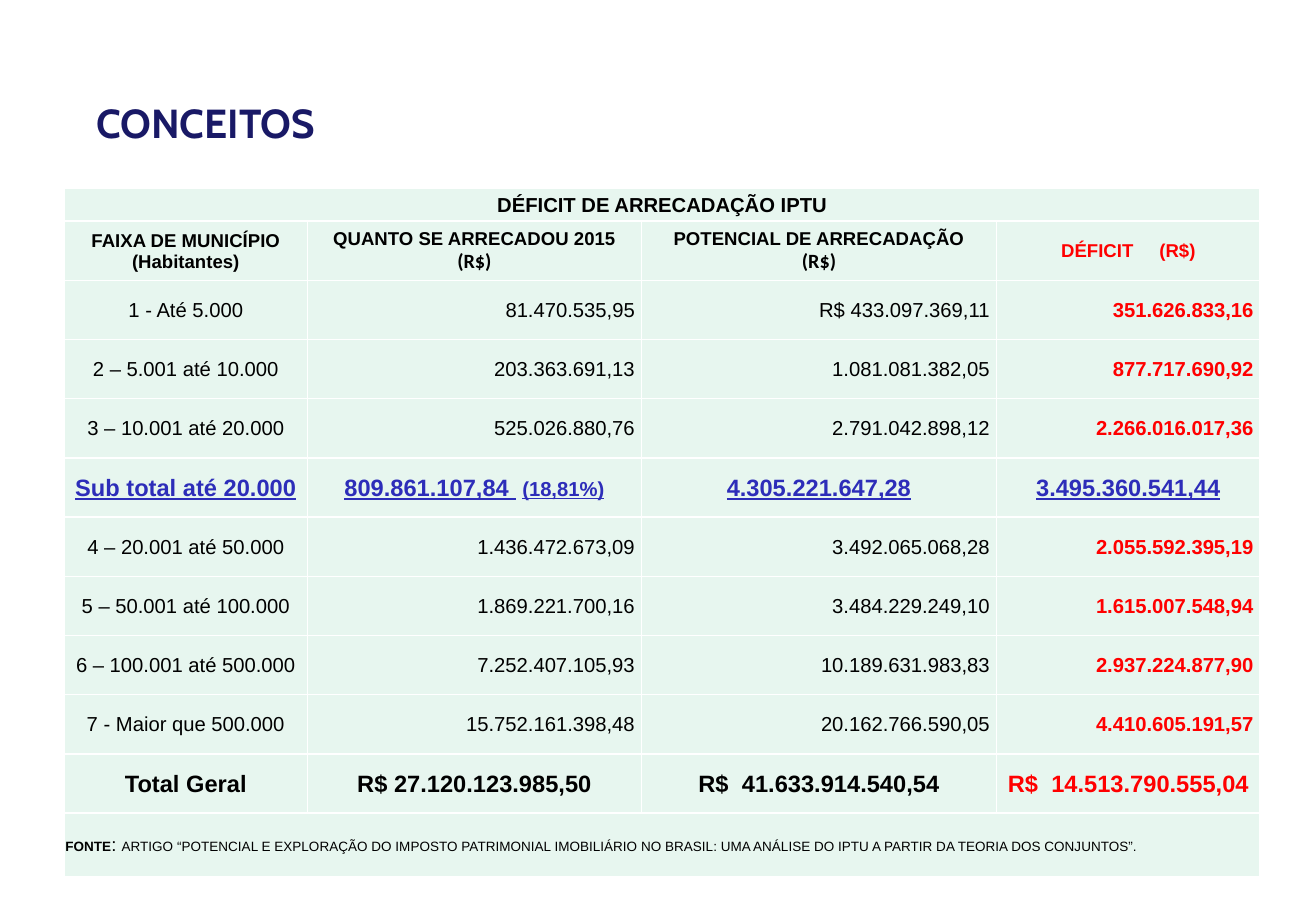
import dataclasses
import typing

import pptx
import pptx.dml.color
import pptx.enum.text
import pptx.oxml
import pptx.oxml.ns
import pptx.util

EMU_PER_PX = 3810
ALIGN = pptx.enum.text.PP_ALIGN
ANCHOR = pptx.enum.text.MSO_ANCHOR


@dataclasses.dataclass(frozen=True)
class Theme:
    title: str = "191966"
    ink: str = "000000"
    deficit: str = "FF0000"
    subtotal: str = "2D2DB9"
    cell: str = "E7F6EF"
    border: str = "FFFFFF"
    body_font: str = "Arial"
    title_font: str = "Cabin"
    unit_font: str = "Calibri"
    title_size: int = 24
    total_size: int = 14
    body_size: int = 12
    head_size: int = 11
    note_size: int = 8


T = Theme()


@dataclasses.dataclass(frozen=True)
class Run:
    text: str
    size: int = T.body_size
    bold: bool = True
    color: str = T.ink
    font: str = T.body_font
    underline: bool = False
    spacing: float = 0


@dataclasses.dataclass(frozen=True)
class Cell:
    lines: tuple[tuple[Run, ...], ...]
    align: ALIGN = ALIGN.CENTER
    margin_right: int = 2


def px(n: int) -> pptx.util.Emu:
    return pptx.util.Emu(n * EMU_PER_PX)


def add_text(p: typing.Any, text: str, *, size: int, bold: bool, color: str,
             font: str, underline: bool = False, spacing: float = 0) -> None:
    r = p.add_run()
    r.text = text
    f = r.font
    f.size = pptx.util.Pt(size)
    f.bold = bold
    f.underline = underline
    f.name = font
    f.color.rgb = pptx.dml.color.RGBColor.from_string(color)
    if spacing:
        r._r.get_or_add_rPr().set("spc", str(round(spacing * 100)))


def set_borders(tc: typing.Any) -> None:
    tcPr = tc.get_or_add_tcPr()
    for i, side in enumerate(("lnL", "lnR", "lnT", "lnB")):
        tcPr.insert(i, pptx.oxml.parse_xml(
            f'<a:{side} {pptx.oxml.ns.nsdecls("a")} w="12700"><a:solidFill>'
            f'<a:srgbClr val="{T.border}"/></a:solidFill></a:{side}>'))


def draw_cell(c: typing.Any, cell: Cell) -> None:
    c.margin_left = c.margin_top = px(2)
    c.margin_right = px(cell.margin_right)
    c.margin_bottom = 0
    c.vertical_anchor = ANCHOR.MIDDLE
    tf = c.text_frame
    for i, line in enumerate(cell.lines):
        p = tf.add_paragraph() if i else tf.paragraphs[0]
        p.alignment = cell.align
        for run in line:
            add_text(p, **dataclasses.asdict(run))


def centred(*runs: Run) -> Cell:
    return Cell((runs,))


def band_row(label: str, raised: str, potential: str, deficit: str) -> list[Cell]:
    def amount(run: Run) -> Cell:
        return Cell(((run,),), ALIGN.RIGHT, 13)
    return [centred(Run(label, bold=False)),
            amount(Run(raised, bold=False)),
            amount(Run(potential, bold=False)),
            amount(Run(deficit, color=T.deficit))]


def head_cell(title: str, unit: Run) -> Cell:
    return Cell(((Run(title, T.head_size),), (unit,)))


def subtotal_run(text: str, size: int = T.total_size, spacing: float = 0) -> Run:
    return Run(text, size, color=T.subtotal, underline=True, spacing=spacing)


def total_cell(value: str, color: str, spacing: float = 0) -> Cell:
    return centred(Run("R$", T.total_size, color=color),
                   Run(" ", T.total_size, color=color, spacing=spacing),
                   Run(value, T.total_size, color=color))


REAIS = Run("(R$)", font=T.unit_font)
COLS = [480, 660, 701, 521]
ROWS = [65] + [117] * 10 + [125]
TABLE = [
    [centred(Run("DÉFICIT DE ARRECADAÇÃO IPTU"))],
    [head_cell("FAIXA DE MUNICÍPIO", Run("(Habitantes)", T.head_size)),
     head_cell("QUANTO SE ARRECADOU 2015", REAIS),
     head_cell("POTENCIAL DE ARRECADAÇÃO", REAIS),
     centred(Run("DÉFICIT", T.head_size, color=T.deficit),
             Run(" ", T.head_size, color=T.deficit, spacing=12.2),
             Run("(R$)", T.head_size, color=T.deficit))],
    band_row("1 - Até 5.000", "81.470.535,95", "R$ 433.097.369,11", "351.626.833,16"),
    band_row("2 – 5.001 até 10.000", "203.363.691,13", "1.081.081.382,05", "877.717.690,92"),
    band_row("3 – 10.001 até 20.000", "525.026.880,76", "2.791.042.898,12", "2.266.016.017,36"),
    [centred(subtotal_run("Sub total até 20.000")),
     centred(subtotal_run("809.861.107,84"), subtotal_run(" ", spacing=3.9),
             subtotal_run("(18,81%)", T.body_size)),
     centred(subtotal_run("4.305.221.647,28")),
     centred(subtotal_run("3.495.360.541,44"))],
    band_row("4 – 20.001 até 50.000", "1.436.472.673,09", "3.492.065.068,28", "2.055.592.395,19"),
    band_row("5 – 50.001 até 100.000", "1.869.221.700,16", "3.484.229.249,10", "1.615.007.548,94"),
    band_row("6 – 100.001 até 500.000", "7.252.407.105,93", "10.189.631.983,83", "2.937.224.877,90"),
    band_row("7 - Maior que 500.000", "15.752.161.398,48", "20.162.766.590,05", "4.410.605.191,57"),
    [centred(Run("Total Geral", T.total_size)),
     total_cell("27.120.123.985,50", T.ink),
     total_cell("41.633.914.540,54", T.ink, 3.9),
     total_cell("14.513.790.555,04", T.deficit, 3.9)],
    [Cell(((Run("FONTE", T.note_size),
            Run(": ", T.head_size, bold=False),
            Run("ARTIGO “POTENCIAL E EXPLORAÇÃO DO IMPOSTO PATRIMONIAL IMOBILIÁRIO NO BRASIL: "
                "UMA ANÁLISE DO IPTU A PARTIR DA TEORIA DOS CONJUNTOS”.",
                T.note_size, bold=False)),), ALIGN.LEFT)],
]


def draw_title(s: typing.Any) -> None:
    sp = s.shapes.title
    sp.left, sp.top, sp.width, sp.height = px(166), px(182), px(533), px(120)
    tf = sp.text_frame
    tf.word_wrap = False
    tf.auto_size = pptx.enum.text.MSO_AUTO_SIZE.SHAPE_TO_FIT_TEXT
    tf.vertical_anchor = ANCHOR.TOP
    p = tf.paragraphs[0]
    p.alignment = ALIGN.LEFT
    add_text(p, "CONCEITOS", size=T.title_size, bold=True, color=T.title, font=T.title_font)


def draw_table(s: typing.Any) -> None:
    tbl = s.shapes.add_table(len(ROWS), len(COLS), px(127), px(372),
                             px(sum(COLS)), px(sum(ROWS))).table
    tbl.first_row = tbl.horz_banding = False
    for col, width in zip(tbl.columns, COLS):
        col.width = px(width)
    for i, (height, cells) in enumerate(zip(ROWS, TABLE)):
        tbl.rows[i].height = px(height)
        if len(cells) == 1:
            tbl.cell(i, 0).merge(tbl.cell(i, len(COLS) - 1))
        for j, cell in enumerate(cells):
            draw_cell(tbl.cell(i, j), cell)
    for c in tbl.iter_cells():
        c.fill.solid()
        c.fill.fore_color.rgb = pptx.dml.color.RGBColor.from_string(T.cell)
        set_borders(c._tc)


def main() -> None:
    prs = pptx.Presentation()
    prs.slide_width, prs.slide_height = px(2599), px(1800)
    s = prs.slides.add_slide(prs.slide_layouts[5])
    draw_title(s)
    draw_table(s)
    prs.save("out.pptx")


if __name__ == "__main__":
    main()
